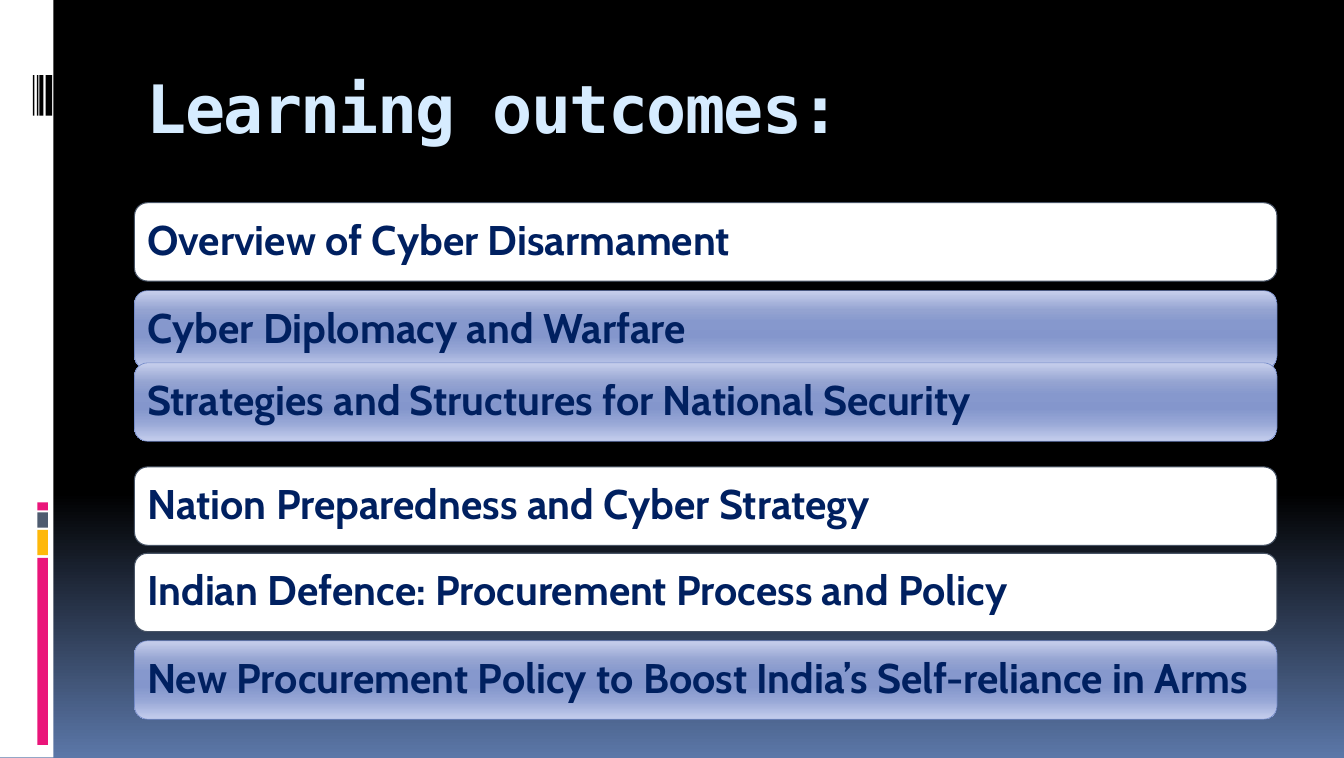
"""Build the "Learning outcomes" slide with its side decoration and outcome cards."""
import pptx
import pptx.dml.color
import pptx.enum.shapes
import pptx.enum.text
import pptx.oxml.ns
import pptx.oxml.xmlchemy
import pptx.util
from pptx.util import Cm, Pt

HEADING = "Learning outcomes:"
OUTCOMES = [
    ("Overview of Cyber Disarmament", 10.19, "white"),
    ("Cyber Diplomacy and Warfare", 14.61, "blue"),
    ("Strategies and Structures for National Security", 18.24, "blue"),
    ("Nation Preparedness and Cyber Strategy", 23.47, "white"),
    ("Indian Defence: Procurement Process and Policy", 27.81, "white"),
    ("New Procurement Policy to Boost India’s Self-reliance in Arms", 32.21, "blue"),
]
BACKDROP = [(0, "000000"), (65, "000000"), (100, "5B77A8")]
GLOSS = [(0, "C7CFEC"), (25, "94A3D1"), (40, "8698CD"), (50, "8496CC"),
         (60, "8698CD"), (75, "95A5D5"), (100, "C5CEED")]
CARD_LINES = {"white": ("475365", 1.5), "blue": ("738AC8", 0.94)}
LEFT, WIDTH, CARD_HEIGHT = 6.76, 57.43, 3.94
SIDE_PANEL = (0, 0, 2.69, 38.07, "FFFFFF")
COLOR_BARS = [(28.04, 9.4, "EA157A"), (26.64, 1.27, "FEB80A"),
              (25.76, 0.76, "4E5B6F"), (25.25, 0.41, "EA157A")]
BARCODE = [(2.29, 0.33), (1.98, 0.2), (1.85, 0.08), (1.65, 0.08)]


def rgb(hex_color):
    return pptx.dml.color.RGBColor.from_string(hex_color)


def paint_gradient(fill, owner, stops):
    fill.gradient()
    fill.gradient_angle = 270
    stop_list = owner.find(".//" + pptx.oxml.ns.qn("a:gsLst"))
    for old_stop in list(stop_list):
        stop_list.remove(old_stop)
    for position, color in stops:
        stop = pptx.oxml.xmlchemy.OxmlElement("a:gs")
        stop.set("pos", str(position * 1000))
        tint = pptx.oxml.xmlchemy.OxmlElement("a:srgbClr")
        tint.set("val", color)
        stop.append(tint)
        stop_list.append(stop)


def add_block(slide, kind, left, top, width, height):
    block = slide.shapes.add_shape(kind, Cm(left), Cm(top), Cm(width), Cm(height))
    block.shadow.inherit = False
    return block


def add_bar(slide, left, top, width, height, color):
    bar = add_block(slide, pptx.enum.shapes.MSO_SHAPE.RECTANGLE, left, top, width, height)
    bar.fill.solid()
    bar.fill.fore_color.rgb = rgb(color)
    bar.line.fill.background()


def write(frame, words, font_name, size, color, insets):
    frame.word_wrap = True
    frame.auto_size = pptx.enum.text.MSO_AUTO_SIZE.NONE
    frame.vertical_anchor = pptx.enum.text.MSO_ANCHOR.MIDDLE
    frame.margin_left = frame.margin_right = Cm(insets[0])
    frame.margin_top = frame.margin_bottom = Cm(insets[1])
    frame.text = words
    paragraph = frame.paragraphs[0]
    paragraph.alignment = pptx.enum.text.PP_ALIGN.LEFT
    paragraph.font.name = font_name
    paragraph.font.size = Pt(size)
    paragraph.font.bold = True
    paragraph.font.color.rgb = rgb(color)
    return paragraph


def add_card(slide, words, top, style):
    card = add_block(slide, pptx.enum.shapes.MSO_SHAPE.ROUNDED_RECTANGLE,
                     LEFT, top, WIDTH, CARD_HEIGHT)
    if style == "blue":
        paint_gradient(card.fill, card._element, GLOSS)
    else:
        card.fill.solid()
        card.fill.fore_color.rgb = rgb("FFFFFF")
    line_color, line_width = CARD_LINES[style]
    card.line.color.rgb = rgb(line_color)
    card.line.width = Pt(line_width)
    outcome = write(card.text_frame, words, "Cabin", 59, "002060", (0.45, 0.45))
    outcome.line_spacing = 0.9


def main():
    deck = pptx.Presentation()
    deck.slide_width, deck.slide_height = Cm(67.56), Cm(38.1)
    slide = deck.slides.add_slide(deck.slide_layouts[5])
    paint_gradient(slide.background.fill, slide._element, BACKDROP)

    add_bar(slide, *SIDE_PANEL)
    for top, height, color in COLOR_BARS:
        add_bar(slide, 1.88, top, 0.53, height, color)
    for left, width in BARCODE:
        add_bar(slide, left, 3.78, width, 2.03, "000000")

    title = slide.shapes.title
    title.left, title.top, title.width, title.height = Cm(LEFT), Cm(2.84), Cm(WIDTH), Cm(5.08)
    heading = write(title.text_frame, HEADING, "DejaVu Sans Mono", 95, "D6ECFF", (0.61, 0.3))
    heading.runs[0]._r.get_or_add_rPr().set("spc", "-240")

    for words, top, style in OUTCOMES:
        add_card(slide, words, top, style)
    deck.save("out.pptx")


if __name__ == "__main__":
    main()
